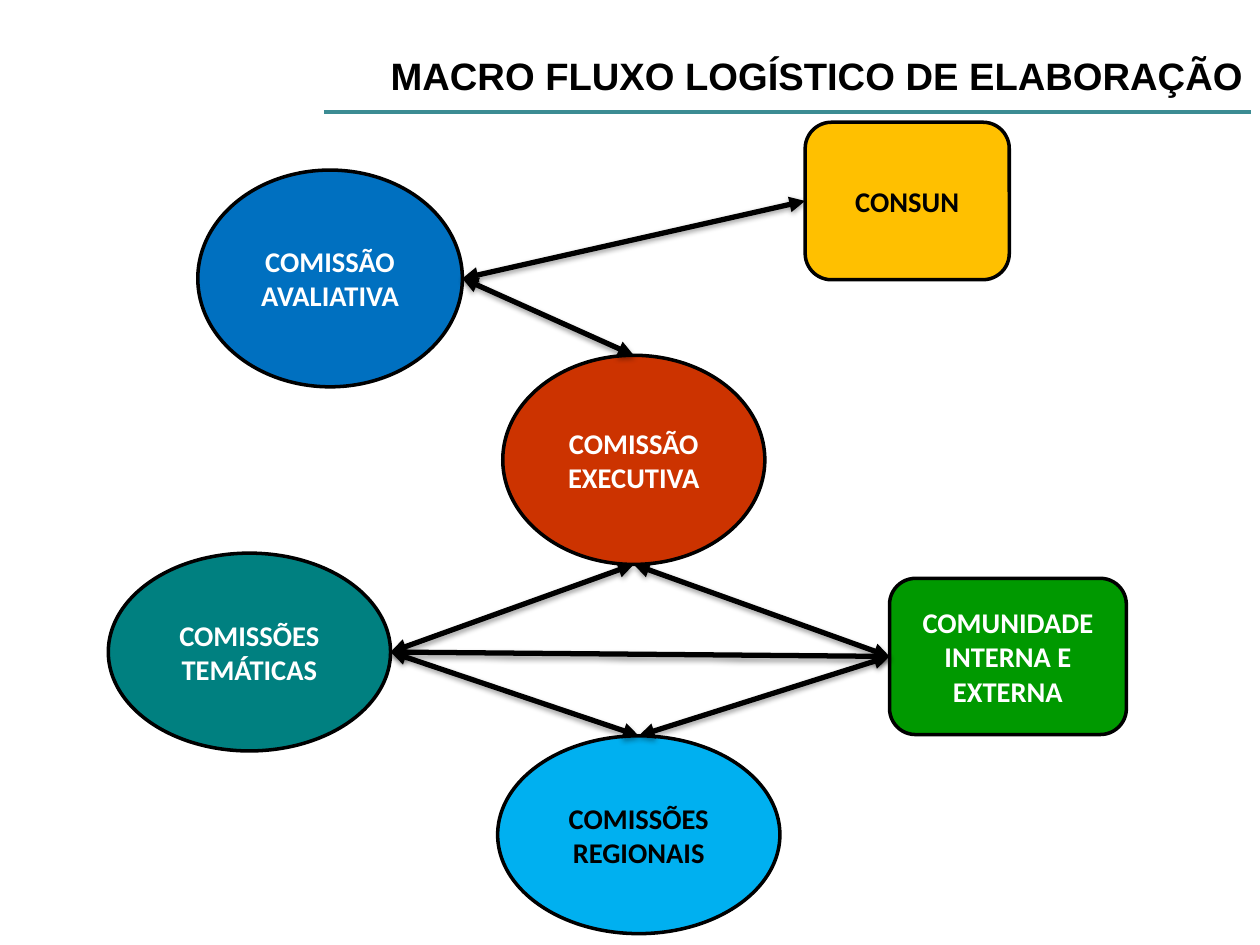
from lxml import etree
from pptx import Presentation
from pptx.dml.color import RGBColor
from pptx.enum import shapes, text
from pptx.oxml import parse_xml
from pptx.oxml.ns import qn
from pptx.util import Inches, Pt

BLACK = RGBColor(0x00, 0x00, 0x00)
WHITE = RGBColor(0xFF, 0xFF, 0xFF)
TEAL_RULE = RGBColor(0x3C, 0x8C, 0x93)
RED = RGBColor(0xCC, 0x33, 0x00)
BLUE = RGBColor(0x00, 0x70, 0xC0)
TEAL = RGBColor(0x00, 0x80, 0x80)
GREEN = RGBColor(0x00, 0x99, 0x00)
GOLD = RGBColor(0xFF, 0xC0, 0x00)
SKY = RGBColor(0x00, 0xB0, 0xF0)

ELLIPSE = shapes.MSO_SHAPE.OVAL
ROUNDED = shapes.MSO_SHAPE.ROUNDED_RECTANGLE
TOP, LEFT, BOTTOM, RIGHT = range(4)

NO_EFFECT = '<a:effectLst xmlns:a="http://schemas.openxmlformats.org/drawingml/2006/main"/>'
SOFT_SHADOW = (
    '<a:effectLst xmlns:a="http://schemas.openxmlformats.org/drawingml/2006/main">'
    '<a:outerShdw blurRad="40000" dist="20000" dir="5400000" rotWithShape="0">'
    '<a:srgbClr val="000000"><a:alpha val="38000"/></a:srgbClr>'
    '</a:outerShdw></a:effectLst>'
)


def add_text(paragraph, content, font_name, size, color):
    run = paragraph.add_run()
    run.text = content
    run.font.name = font_name
    run.font.size = Pt(size)
    run.font.bold = True
    run.font.color.rgb = color


def add_line(start, end, color, width, effect):
    connector = slide.shapes.add_connector(shapes.MSO_CONNECTOR.STRAIGHT, *start, *end)
    connector.line.color.rgb = color
    connector.line.width = Pt(width)
    connector._element.spPr.append(parse_xml(effect))
    return connector


presentation = Presentation()
presentation.slide_width = Inches(10)
presentation.slide_height = Inches(7.5)
slide = presentation.slides.add_slide(presentation.slide_layouts[5])

add_line((Inches(2.57), Inches(0.89)), (Inches(9.93), Inches(0.89)), TEAL_RULE, 2.5, NO_EFFECT)

title = slide.shapes.title
title.left, title.top = Inches(3), Inches(0.36)
title.width, title.height = Inches(7.01), Inches(0.47)
title_frame = title.text_frame
title_frame.word_wrap = False
title_frame.auto_size = text.MSO_AUTO_SIZE.SHAPE_TO_FIT_TEXT
title_frame.vertical_anchor = text.MSO_ANCHOR.MIDDLE
title_frame.paragraphs[0].alignment = text.PP_ALIGN.LEFT
add_text(title_frame.paragraphs[0], "MACRO FLUXO LOGÍSTICO DE ELABORAÇÃO", "Arial", 21.8, BLACK)

groups = [
    ("executiva", "COMISSÃO EXECUTIVA", ELLIPSE, 3.99, 2.82, 2.08, 1.66, RED, WHITE),
    ("avaliativa", "COMISSÃO AVALIATIVA", ELLIPSE, 1.57, 1.35, 2.1, 1.72, BLUE, WHITE),
    ("temáticas", "COMISSÕES TEMÁTICAS", ELLIPSE, 0.86, 4.39, 2.24, 1.57, TEAL, WHITE),
    ("comunidade", "COMUNIDADE INTERNA E EXTERNA", ROUNDED, 7.06, 4.59, 1.88, 1.24, GREEN, WHITE),
    ("consun", "CONSUN", ROUNDED, 6.39, 0.97, 1.62, 1.25, GOLD, BLACK),
    ("regionais", "COMISSÕES REGIONAIS", ELLIPSE, 3.95, 5.84, 2.24, 1.57, SKY, BLACK),
]
nodes = {}
for name, label, kind, left, top, width, height, fill, font_color in groups:
    shape = slide.shapes.add_shape(kind, Inches(left), Inches(top), Inches(width), Inches(height))
    shape.shadow.inherit = False
    shape.fill.solid()
    shape.fill.fore_color.rgb = fill
    shape.line.color.rgb = BLACK
    shape.line.width = Pt(2)
    frame = shape.text_frame
    frame.word_wrap = True
    frame.vertical_anchor = text.MSO_ANCHOR.MIDDLE
    frame.paragraphs[0].alignment = text.PP_ALIGN.CENTER
    add_text(frame.paragraphs[0], label, "Calibri", 16.3, font_color)
    nodes[name] = shape

flows = [
    ("temáticas", RIGHT, "comunidade", LEFT),
    ("temáticas", RIGHT, "executiva", BOTTOM),
    ("avaliativa", RIGHT, "executiva", TOP),
    ("avaliativa", RIGHT, "consun", LEFT),
    ("executiva", BOTTOM, "comunidade", LEFT),
    ("regionais", TOP, "comunidade", LEFT),
    ("temáticas", RIGHT, "regionais", TOP),
]
for source, source_side, target, target_side in flows:
    ends = []
    for name, side in ((source, source_side), (target, target_side)):
        shape = nodes[name]
        across = {LEFT: 0, RIGHT: 1}.get(side, 0.5)
        down = {TOP: 0, BOTTOM: 1}.get(side, 0.5)
        ends.append((int(shape.left + shape.width * across), int(shape.top + shape.height * down)))
    connector = add_line(*ends, BLACK, 3, SOFT_SHADOW)
    if source_side == TOP:
        connector.begin_connect(nodes[source], source_side)
    if target_side in (TOP, LEFT):
        connector.end_connect(nodes[target], target_side)
    for tag in ("a:headEnd", "a:tailEnd"):
        etree.SubElement(connector.line._get_or_add_ln(), qn(tag), type="triangle")

presentation.save("out.pptx")
